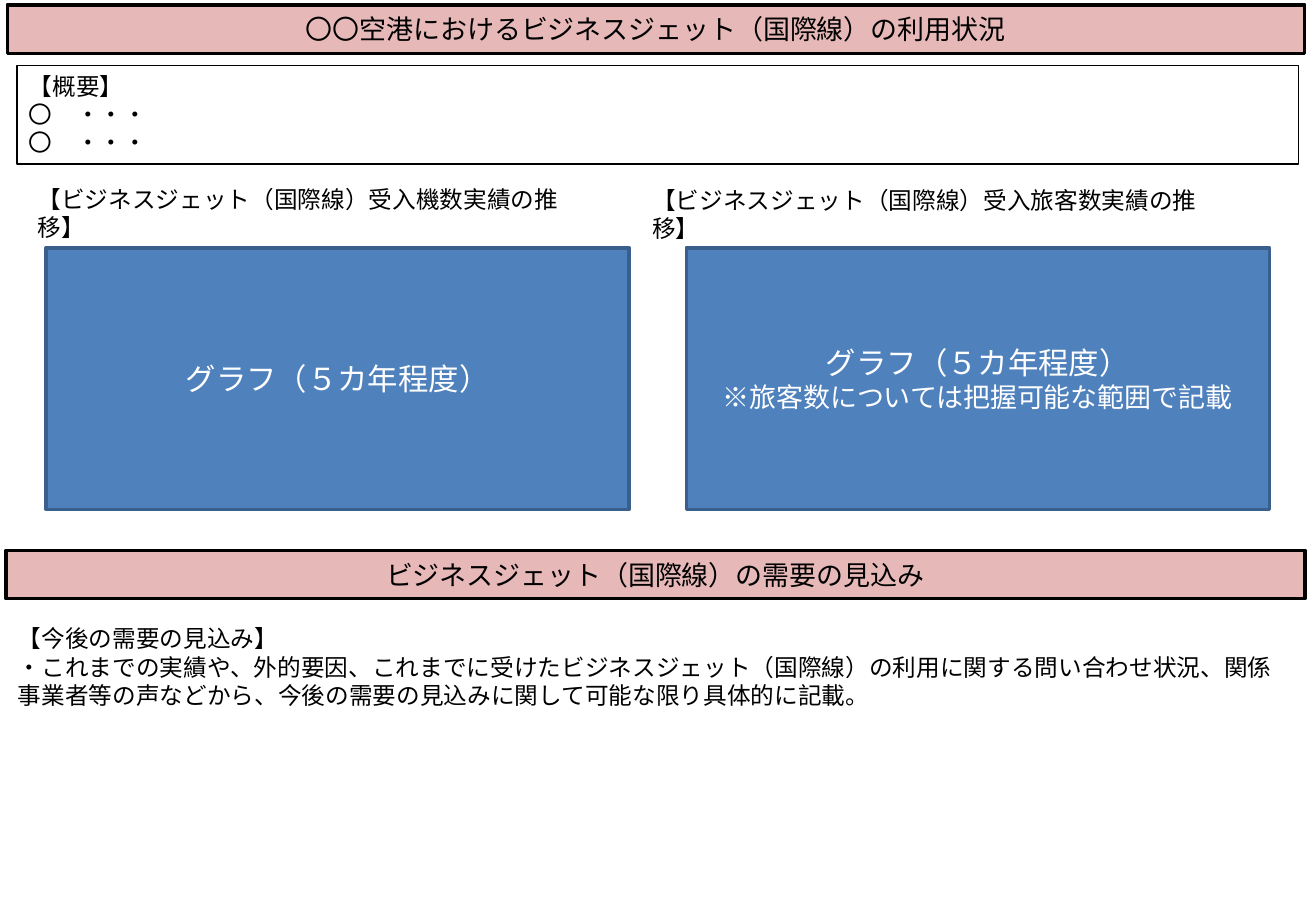
from dataclasses import dataclass

from lxml import etree
from pptx import Presentation
from pptx.dml.color import RGBColor
from pptx.enum.shapes import MSO_SHAPE
from pptx.enum.text import MSO_ANCHOR, MSO_AUTO_SIZE, PP_ALIGN
from pptx.oxml.ns import qn
from pptx.util import Inches, Pt

RECT = MSO_SHAPE.RECTANGLE
TOP, MIDDLE = MSO_ANCHOR.TOP, MSO_ANCHOR.MIDDLE
LEFT, CENTER = PP_ALIGN.LEFT, PP_ALIGN.CENTER
FIT, FIXED = MSO_AUTO_SIZE.SHAPE_TO_FIT_TEXT, MSO_AUTO_SIZE.NONE

WIDTH, HEIGHT = Inches(10.83), Inches(7.5)
COL, ROW = WIDTH / 100, HEIGHT / 100
COLORS = {
    "black": "000000",
    "white": "FFFFFF",
    "pink": "E6B9B8",
    "blue": "4F81BD",
    "navy": "3A5F8C",
}


@dataclass(frozen=True)
class Style:
    font: str = "Calibri"
    color: str = "black"
    fill: str = ""
    line: str = ""
    line_width: float = 2
    anchor: MSO_ANCHOR = TOP
    align: PP_ALIGN = LEFT
    auto_size: MSO_AUTO_SIZE = FIT


@dataclass(frozen=True)
class Line:
    text: str
    size: int = 14


@dataclass(frozen=True)
class Block:
    col: float
    row: float
    cols: float
    rows: float
    style: Style
    lines: tuple[Line, ...]


BANNER = Style("Noto Sans CJK JP", "black", "pink", "black", 2, MIDDLE, CENTER, FIXED)
GRAPH = Style("Calibri", "white", "blue", "navy", 2, MIDDLE, CENTER, FIXED)
SUMMARY = Style(line="black", line_width=0.75)
PLAIN = Style()

GRAPH_LABEL = Line("グラフ（５カ年程度）", 18)
GRAPH_NOTE = Line("※旅客数については把握可能な範囲で記載", 16)
BULLET = Line("〇　・・・")

BLOCKS = (
    Block(0.55, 0.53, 98.6, 5.33, BANNER,
          (Line("〇〇空港におけるビジネスジェット（国際線）の利用状況", 16),)),
    Block(1.29, 7.2, 97.4, 10.8, SUMMARY, (Line("【概要】"), BULLET, BULLET)),
    Block(1.94, 19.6, 43.6, 4.5, PLAIN,
          (Line("【ビジネスジェット（国際線）受入機数実績の推移】"),)),
    Block(3.5, 27.2, 44.3, 28.7, GRAPH, (GRAPH_LABEL,)),
    Block(48.65, 19.75, 43.6, 4.5, PLAIN,
          (Line("【ビジネスジェット（国際線）受入旅客数実績の推移】"),)),
    Block(52.15, 27.2, 44.3, 28.7, GRAPH, (GRAPH_LABEL, GRAPH_NOTE)),
    Block(0.45, 60.4, 98.7, 5.33, BANNER,
          (Line("ビジネスジェット（国際線）の需要の見込み", 16),)),
    Block(0.45, 67.85, 98.7, 13.85, PLAIN,
          (Line("【今後の需要の見込み】"),
           Line("・これまでの実績や、外的要因、これまでに受けたビジネスジェット（国際線）の"
                "利用に関する問い合わせ状況、関係事業者等の声などから、"
                "今後の需要の見込みに関して可能な限り具体的に記載。"))),
)


def rgb(name: str) -> RGBColor:
    return RGBColor.from_string(COLORS[name])


def apply(target, values: dict) -> None:
    for name, value in values.items():
        setattr(target, name, value)


def write_lines(tf, lines: tuple[Line, ...], style: Style) -> None:
    apply(tf, {"word_wrap": True, "auto_size": style.auto_size,
               "vertical_anchor": style.anchor})
    for i, line in enumerate(lines):
        p = tf.add_paragraph() if i else tf.paragraphs[0]
        p.alignment = style.align
        r = p.add_run()
        r.text = line.text
        apply(r.font, {"name": style.font, "size": Pt(line.size)})
        r.font.color.rgb = rgb(style.color)
        ea = etree.SubElement(r.font._element, qn("a:ea"))
        ea.set("typeface", style.font)


def draw_block(s, block: Block) -> None:
    style = block.style
    box = (round(block.col * COL), round(block.row * ROW),
           round(block.cols * COL), round(block.rows * ROW))
    if style.line:
        sp = s.shapes.add_shape(RECT, *box)
        sp.shadow.inherit = False
        apply(sp.line, {"width": Pt(style.line_width)})
        sp.line.color.rgb = rgb(style.line)
        if style.fill:
            sp.fill.solid()
            sp.fill.fore_color.rgb = rgb(style.fill)
        else:
            sp.fill.background()
    else:
        sp = s.shapes.add_textbox(*box)
    write_lines(sp.text_frame, block.lines, style)


def main() -> None:
    prs = Presentation()
    apply(prs, {"slide_width": WIDTH, "slide_height": HEIGHT})
    s = prs.slides.add_slide(prs.slide_layouts[6])
    for block in BLOCKS:
        draw_block(s, block)
    prs.save("out.pptx")


if __name__ == "__main__":
    main()
